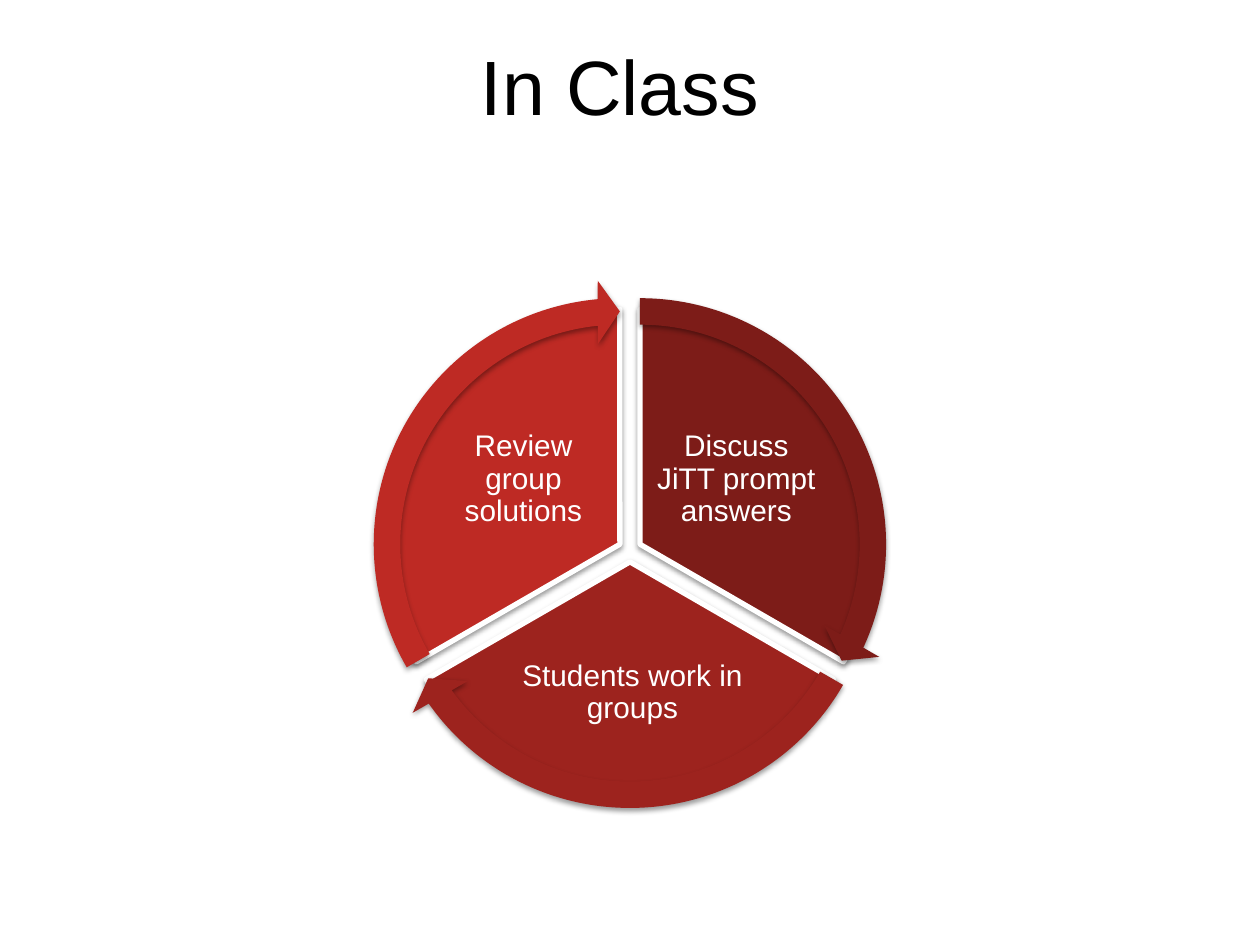
"""Build the "In Class" slide: a three-step cycle of pie sectors and circular arrows."""
from lxml.etree import SubElement
from pptx import Presentation
from pptx.dml.color import RGBColor
from pptx.enum.shapes import MSO_SHAPE
from pptx.enum.text import MSO_ANCHOR, PP_ALIGN
from pptx.oxml.ns import qn
from pptx.util import Inches, Pt

BLACK = RGBColor(0x00, 0x00, 0x00)
WHITE = RGBColor(0xFF, 0xFF, 0xFF)
DARK_RED = RGBColor(0x7D, 0x1C, 0x18)
MEDIUM_RED = RGBColor(0x9D, 0x23, 0x1E)
BRIGHT_RED = RGBColor(0xBE, 0x2A, 0x24)

PIE_SIZE = 3.73
ARROW_SIZE = 4.2
HEAD_ANGLE = 3.27

STEPS = [
    ("Discuss JiTT prompt answers", DARK_RED, (5.08, 4.32), (162, 18), (5.18, 3.25, 1.33, 1.11)),
    ("Students work in groups", MEDIUM_RED, (5, 4.46), (18, 90), (4.02, 5.01, 2, 0.98)),
    ("Review group solutions", BRIGHT_RED, (4.92, 4.32), (90, 162), (3.49, 3.25, 1.33, 1.11)),
]

presentation = Presentation()
presentation.slide_width = Inches(10)
presentation.slide_height = Inches(7.5)
slide = presentation.slides.add_slide(presentation.slide_layouts[6])


def add_text(text, box, size, color, frame_format, line_spacing):
    """Add a centred text box."""
    text_box = slide.shapes.add_textbox(*map(Inches, box))
    frame = text_box.text_frame
    frame_format = {"word_wrap": True, "vertical_anchor": MSO_ANCHOR.MIDDLE, **frame_format}
    for name, value in frame_format.items():
        setattr(frame, name, value)
    paragraph = frame.paragraphs[0]
    paragraph.text = text
    paragraph.alignment = PP_ALIGN.CENTER
    paragraph.line_spacing = line_spacing
    for name, value in {"name": "Arial", "size": Pt(size)}.items():
        setattr(paragraph.font, name, value)
    paragraph.font.color.rgb = color


def add_round_shape(kind, center, size, color, adjustments):
    """Add a shadowed shape around a centre point."""
    left, top = (Inches(middle - size / 2) for middle in center)
    shape = slide.shapes.add_shape(kind, left, top, Inches(size), Inches(size))
    for index, value in enumerate(adjustments):
        shape.adjustments[index] = value
    shape.fill.solid()
    shape.fill.fore_color.rgb = color
    shape.line.fill.background()
    shape.shadow.inherit = False
    effects = shape._element.spPr.find(qn("a:effectLst"))
    shadow = SubElement(effects, qn("a:outerShdw"), blurRad=str(Pt(3.1)),
                        dist=str(Pt(1.6)), dir="5400000", rotWithShape="0")
    shadow_color = SubElement(shadow, qn("a:srgbClr"), val=str(BLACK))
    SubElement(shadow_color, qn("a:alpha"), val="38000")
    return shape


add_text("In Class", (0.67, 0.17, 8.5, 1), 44, BLACK, {}, 1.0)

label_margins = {f"margin_{side}": Inches(0.02) for side in ("left", "top", "right", "bottom")}
for label, color, center, angles, label_box in STEPS:
    sector = add_round_shape(MSO_SHAPE.PIE, center, PIE_SIZE, color, angles)
    sector.line.color.rgb = WHITE
    sector.line.width = Pt(3)
    add_text(label, label_box, 17, WHITE, label_margins, 0.9)

for label, color, center, (start, end), label_box in STEPS:
    adjustments = (0.05, HEAD_ANGLE, end - HEAD_ANGLE, start, 0.06)
    add_round_shape(MSO_SHAPE.CIRCULAR_ARROW, center, ARROW_SIZE, color, adjustments)

presentation.save("out.pptx")
